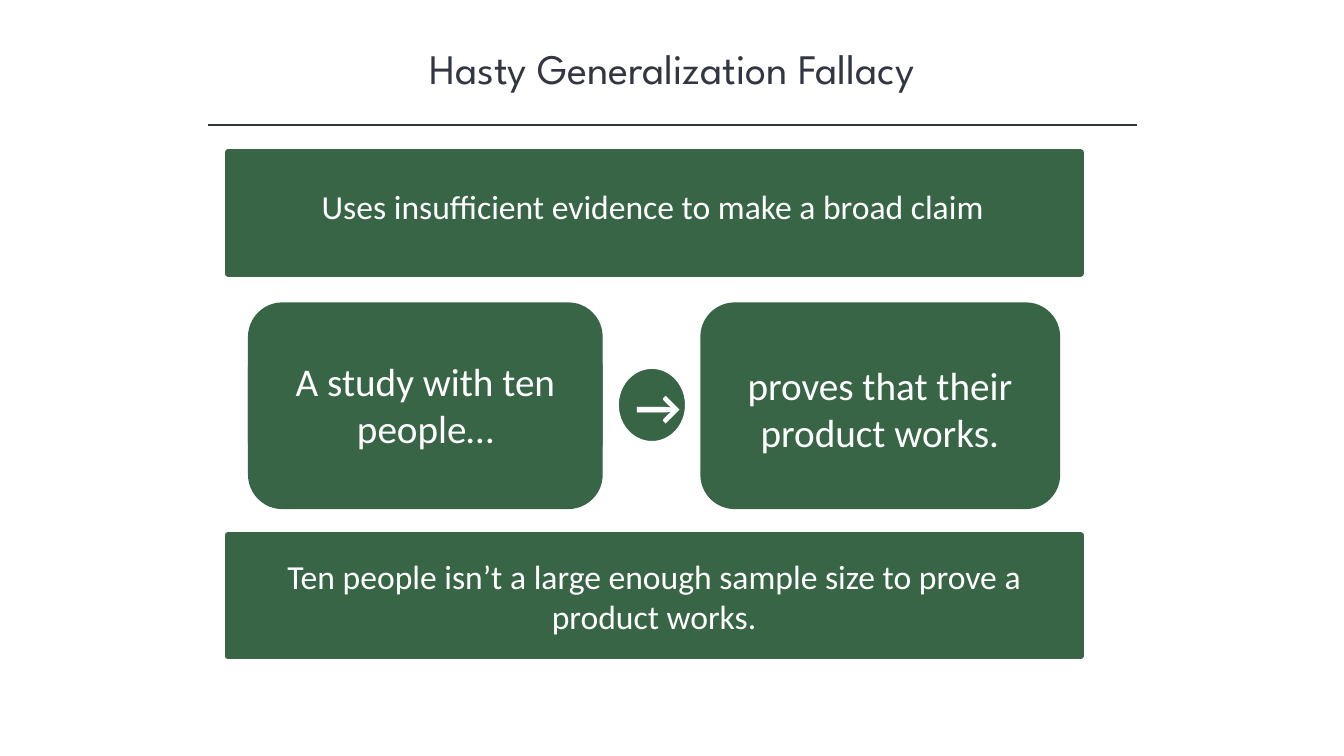
import pptx
import pptx.dml.color
import pptx.enum.shapes
import pptx.enum.text
import pptx.oxml.ns
import pptx.util
from lxml import etree

Cm = pptx.util.Cm
Pt = pptx.util.Pt
Shape = pptx.enum.shapes.MSO_SHAPE
Anchor = pptx.enum.text.MSO_ANCHOR


def color(code):
    return pptx.dml.color.RGBColor.from_string(code)


def write(shape, text, size, font="Calibri", ink="FFFFFF", bold=False, anchor=Anchor.MIDDLE):
    """Put one centred paragraph into the shape."""
    frame = shape.text_frame
    frame.word_wrap = True
    frame.vertical_anchor = anchor
    para = frame.paragraphs[0]
    para.alignment = pptx.enum.text.PP_ALIGN.CENTER
    span = para.add_run()
    span.text = text
    span.font.name = font
    span.font.size = Pt(size)
    span.font.bold = bold
    span.font.color.rgb = color(ink)


class FallacyPage:
    green = "386546"
    white = "FFFFFF"
    dark = "323542"

    def __init__(self, deck):
        self.page = deck.slides.add_slide(deck.slide_layouts[6])

    def label(self, left, top, width, height, text, size, **style):
        box = self.page.shapes.add_textbox(Cm(left), Cm(top), Cm(width), Cm(height))
        write(box, text, size, anchor=Anchor.TOP, **style)

    def block(self, kind, left, top, width, height, edge=None, edge_width=0):
        """Add a green shape, without an outline unless an edge colour is given."""
        shape = self.page.shapes.add_shape(kind, Cm(left), Cm(top), Cm(width), Cm(height))
        shape.shadow.inherit = False
        shape.fill.solid()
        shape.fill.fore_color.rgb = color(self.green)
        if edge:
            shape.line.color.rgb = color(edge)
            shape.line.width = Pt(edge_width)
        else:
            shape.line.fill.background()
        return shape

    def banner(self, top):
        return self.block(Shape.RECTANGLE, 5.74, top, 21.49, 3.05, self.green, 4.5)

    def card(self, left, width, caption_left, caption_top, caption_width, text):
        """Add a rounded card with its caption panel on top."""
        self.block(Shape.ROUNDED_RECTANGLE, left, 7.62, width, 5.21)
        caption = self.block(Shape.ROUNDED_RECTANGLE, caption_left, caption_top, caption_width, 2.92)
        write(caption, text, 28)

    def rule(self, left, right, height):
        line = self.page.shapes.add_connector(
            pptx.enum.shapes.MSO_CONNECTOR.STRAIGHT, Cm(left), Cm(height), Cm(right), Cm(height))
        line.line.color.rgb = color(self.dark)
        line.line.width = Pt(1)
        etree.SubElement(line._element.spPr, pptx.oxml.ns.qn("a:effectLst"))


def main():
    deck = pptx.Presentation()
    deck.slide_width = Cm(33.87)
    deck.slide_height = Cm(19.05)

    page = FallacyPage(deck)
    page.label(4.24, 0.94, 25.4, 1.55, "Hasty Generalization Fallacy", 30,
               font="League Spartan", ink=page.dark)
    page.rule(5.23, 28.65, 3.15)

    page.card(17.65, 9.07, 17.96, 8.84, 8.43, "proves that their product works.")
    page.card(6.25, 8.94, 6.25, 8.74, 8.94, "A study with ten people…")

    conclusion = page.banner(13.49)
    write(conclusion, "Ten people isn’t a large enough sample size to prove a product works.", 24)
    page.banner(3.84)
    page.label(6.71, 4.55, 19.48, 1.27, "Uses insufficient evidence to make a broad claim", 24)

    arrow = page.block(Shape.OVAL, 15.49, 9.19, 1.88, 2.03, page.white, 6)
    write(arrow, "→", 36, bold=True)

    deck.save("out.pptx")


if __name__ == "__main__":
    main()
